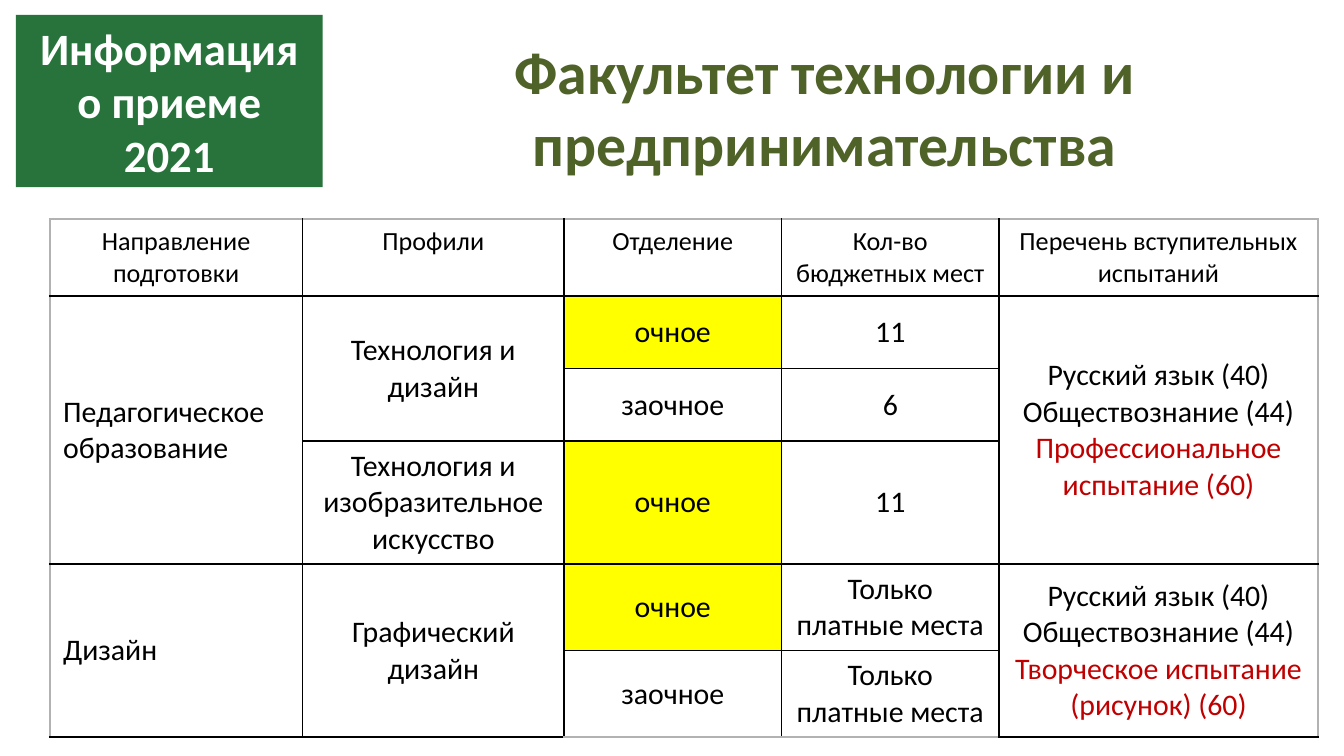
from lxml import etree
from pptx import Presentation
from pptx.dml.color import RGBColor
from pptx.enum.shapes import MSO_SHAPE
from pptx.enum.text import MSO_ANCHOR, PP_ALIGN
from pptx.oxml.ns import qn
from pptx.util import Cm, Pt

CENTER, LEFT = PP_ALIGN.CENTER, PP_ALIGN.LEFT
TOP, MIDDLE = MSO_ANCHOR.TOP, MSO_ANCHOR.MIDDLE
RECTANGLE = MSO_SHAPE.RECTANGLE
FONT = "Calibri"
BLACK, WHITE, GRAY, RED = "000000", "FFFFFF", "B2B2B2", "C00000"
GREEN, OLIVE, YELLOW = "27733B", "4F6228", "FFFF00"

# Content
BADGE = "Информация о приеме\v2021"
TITLE = "Факультет технологии и предпринимательства"
COMMON_EXAMS = ["Русский язык (40)", "Обществознание (44)"]
PAID_ONLY = "Только платные места"
FULL_TIME, PART_TIME = "очное", "заочное"
# None marks a cell covered by the one above it
ROWS = [
    ["Направление подготовки", "Профили", "Отделение", "Кол-во бюджетных мест",
     "Перечень вступительных испытаний"],
    ["Педагогическое образование", "Технология и дизайн", FULL_TIME, "11",
     COMMON_EXAMS + ["Профессиональное испытание (60)"]],
    [None, None, PART_TIME, "6", None],
    [None, "Технология и изобразительное искусство", FULL_TIME, "11", None],
    ["Дизайн", "Графический дизайн", FULL_TIME, PAID_ONLY,
     COMMON_EXAMS + ["Творческое испытание (рисунок) (60)"]],
    [None, None, PART_TIME, PAID_ONLY, None],
]
COLUMN_WIDTHS = [4.78, 4.94, 4.11, 4.11, 6.03]
ROW_HEIGHTS = [1.45, 1.37, 1.37, 2.28, 1.61, 1.61]


def color(value):
    return RGBColor.from_string(value)


def format_paragraph(paragraph, size, font_color, alignment=CENTER, bold=False):
    paragraph.alignment = alignment
    for run in paragraph.runs:
        run.font.name = FONT
        run.font.size = Pt(size)
        run.font.bold = bold
        run.font.color.rgb = color(font_color)


def set_borders(cell, sides):
    properties = cell._tc.get_or_add_tcPr()
    for index, (side, line_color) in enumerate(sides.items()):
        line = etree.Element(qn(f"a:ln{side}"), w=str(Pt(1)))
        fill = etree.SubElement(line, qn("a:solidFill"))
        etree.SubElement(fill, qn("a:srgbClr"), val=line_color)
        properties.insert(index, line)


presentation = Presentation()
presentation.slide_width, presentation.slide_height = Cm(25.4), Cm(14.29)
slide = presentation.slides.add_slide(presentation.slide_layouts[5])

# Green badge
badge = slide.shapes.add_shape(RECTANGLE, Cm(0.3), Cm(0.28), Cm(5.8), Cm(3.26))
badge.shadow.inherit = False
badge.fill.solid()
badge.fill.fore_color.rgb = color(GREEN)
badge.line.fill.background()
badge.text_frame.text = BADGE
badge.text_frame.vertical_anchor = MIDDLE
format_paragraph(badge.text_frame.paragraphs[0], 24, WHITE, bold=True)

# Title
title = slide.shapes.title
title.left, title.top, title.width, title.height = Cm(7.04), Cm(0.53), Cm(17.1), Cm(3)
title.text_frame.text = TITLE
title.text_frame.word_wrap = True
title.text_frame.vertical_anchor = TOP
format_paragraph(title.text_frame.paragraphs[0], 32, OLIVE, bold=True)

# Admission table
row_count, column_count = len(ROWS), len(COLUMN_WIDTHS)
table = slide.shapes.add_table(
    row_count, column_count, Cm(0.94), Cm(4.14),
    Cm(sum(COLUMN_WIDTHS)), Cm(sum(ROW_HEIGHTS))).table
table.first_row = table.horz_banding = False
for column, width in zip(table.columns, COLUMN_WIDTHS):
    column.width = Cm(width)
for row, height in zip(table.rows, ROW_HEIGHTS):
    row.height = Cm(height)

for r, values in enumerate(ROWS):
    for c, value in enumerate(values):
        cell = table.cell(r, c)
        cell.fill.solid()
        cell.fill.fore_color.rgb = color(YELLOW if value == FULL_TIME else WHITE)
        set_borders(cell, {
            "L": GRAY if c == 0 else BLACK,
            "R": GRAY if c == column_count - 1 else BLACK,
            "T": GRAY if r == 0 else BLACK,
            "B": GRAY if r == row_count - 1 else BLACK,
        })
        if value is None:
            continue
        is_header = r == 0
        lines = value if isinstance(value, list) else [value]
        cell.text_frame.text = "\n".join(lines)
        cell.vertical_anchor = TOP if is_header else MIDDLE
        for number, paragraph in enumerate(cell.text_frame.paragraphs):
            format_paragraph(
                paragraph, 14 if is_header else 16,
                RED if number == len(COMMON_EXAMS) else BLACK,
                LEFT if c == 0 and not is_header else CENTER)

        # Join with the covered cells below
        last = r
        while last + 1 < row_count and ROWS[last + 1][c] is None:
            last += 1
        if last > r:
            cell.merge(table.cell(last, c))

presentation.save("out.pptx")
